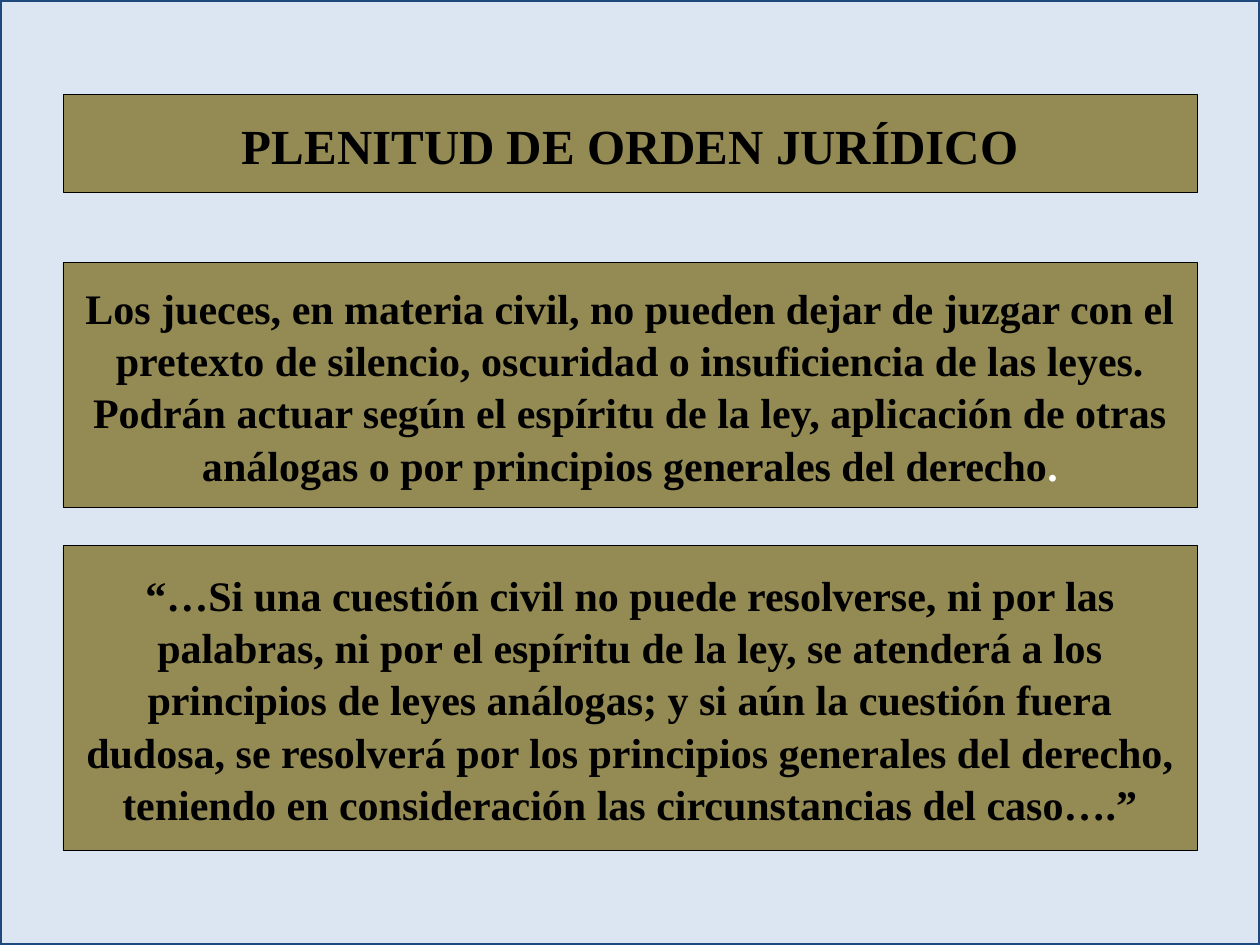
import pptx
import pptx.dml.color
import pptx.enum.shapes
import pptx.enum.text
import pptx.util
from pptx.util import Inches

THEME = {
    "backdrop": "DCE6F2",
    "frame": "1F497D",
    "panel": "948A54",
    "ink": "000000",
    "light": "FFFFFF",
    "font": "Times New Roman",
    "title_size": 28,
    "body_size": 24,
}


def color(name):
    return pptx.dml.color.RGBColor.from_string(THEME[name])


def style_panel(shape, runs, size):
    """Fill and outline a panel, then write its centred text."""
    shape.fill.solid()
    shape.fill.fore_color.rgb = color("panel")
    shape.line.color.rgb = color("ink")
    shape.line.width = pptx.util.Pt(0.25)
    frame = shape.text_frame
    frame.word_wrap = True
    frame.auto_size = pptx.enum.text.MSO_AUTO_SIZE.NONE
    frame.vertical_anchor = pptx.enum.text.MSO_ANCHOR.MIDDLE
    paragraph = frame.paragraphs[0]
    paragraph.alignment = pptx.enum.text.PP_ALIGN.CENTER
    paragraph.line_spacing = 1.04
    paragraph.font.name = THEME["font"]
    paragraph.font.size = pptx.util.Pt(THEME[size])
    paragraph.font.bold = True
    for text, ink in runs:
        run = paragraph.add_run()
        run.text = text
        run.font.color.rgb = color(ink)


presentation = pptx.Presentation()
presentation.slide_width = Inches(10)
presentation.slide_height = Inches(7.5)
slide = presentation.slides.add_slide(presentation.slide_layouts[5])
rectangle = pptx.enum.shapes.MSO_SHAPE.RECTANGLE
left, width = Inches(0.5), Inches(9)

# Framed backdrop, placed behind the title
backdrop = slide.shapes.add_shape(
    rectangle, 0, 0, presentation.slide_width, presentation.slide_height)
backdrop.shadow.inherit = False
backdrop.fill.solid()
backdrop.fill.fore_color.rgb = color("backdrop")
backdrop.line.color.rgb = color("frame")
backdrop.line.width = pptx.util.Pt(2)
slide.shapes.title._element.addprevious(backdrop._element)

# Title
title = slide.shapes.title
title.left, title.top, title.width, title.height = left, Inches(0.75), width, Inches(0.78)
style_panel(title, [("PLENITUD DE ORDEN JURÍDICO", "ink")], "title_size")

# Body panels: top, height, runs
panels = [
    (2.08, 1.95, [
        ("Los jueces, en materia civil, no pueden dejar de juzgar con el pretexto "
         "de silencio, oscuridad o insuficiencia de las leyes. Podrán actuar según "
         "el espíritu de la ley, aplicación de otras análogas o por principios "
         "generales del derecho", "ink"),
        (".", "light"),
    ]),
    (4.33, 2.42, [
        ("“…Si una cuestión civil no puede resolverse, ni por las palabras, ni por "
         "el espíritu de la ley, se atenderá a los principios de leyes análogas; y "
         "si aún la cuestión fuera dudosa, se resolverá por los principios generales "
         "del derecho, teniendo en consideración las circunstancias del caso….”", "ink"),
    ]),
]
for top, height, runs in panels:
    panel = slide.shapes.add_shape(rectangle, left, Inches(top), width, Inches(height))
    panel.shadow.inherit = False
    style_panel(panel, runs, "body_size")

presentation.save("out.pptx")
